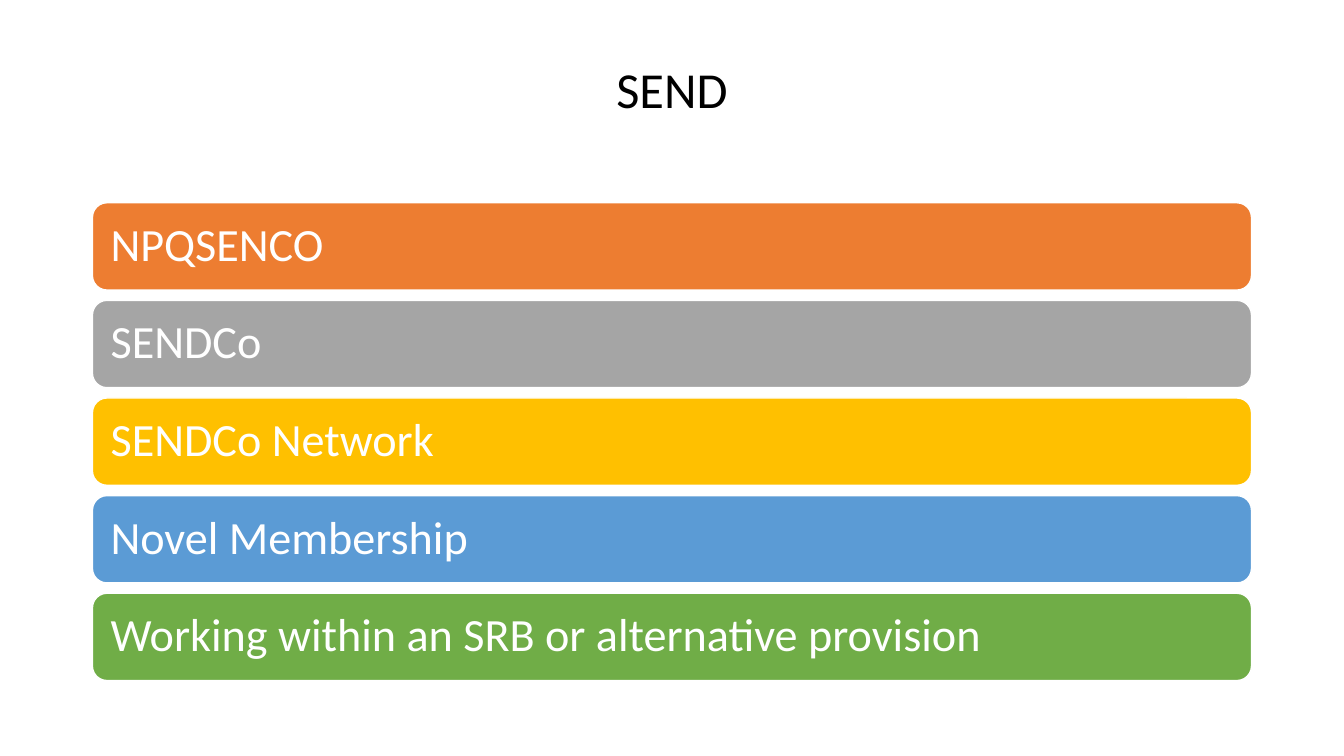
"""Build the SEND slide: a title above five coloured bars."""
import pptx
import pptx.dml.color
import pptx.enum.shapes
import pptx.enum.text
import pptx.util

Cm = pptx.util.Cm
Pt = pptx.util.Pt
Align = pptx.enum.text.PP_ALIGN
Anchor = pptx.enum.text.MSO_ANCHOR


def tint(hex):
    return pptx.dml.color.RGBColor.from_string(hex)


def write(shape, text, size, color, align, frame_format):
    frame = shape.text_frame
    for name, value in frame_format.items():
        setattr(frame, name, value)
    para = frame.paragraphs[0]
    para.text = text
    para.alignment = align
    para.line_spacing = 0.9
    for name, value in {"name": "Calibri", "size": Pt(size)}.items():
        setattr(para.font, name, value)
    para.font.color.rgb = tint(color)


deck = pptx.Presentation()
deck.slide_width = Cm(33.87)
deck.slide_height = Cm(19.05)
slide = deck.slides.add_slide(deck.slide_layouts[6])

left, width = Cm(2.33), Cm(29.21)
title = slide.shapes.add_textbox(left, Cm(1.55), width, Cm(3.15))
title_format = {
    "word_wrap": True,
    "vertical_anchor": Anchor.TOP,
    "margin_top": Cm(0.1),
}
write(title, "SEND", 36, "000000", Align.CENTER, title_format)

bars = [
    ("NPQSENCO", "ED7D31"),
    ("SENDCo", "A5A5A5"),
    ("SENDCo Network", "FFC000"),
    ("Novel Membership", "5B9BD5"),
    ("Working within an SRB or alternative provision", "70AD47"),
]
bar_format = {
    "word_wrap": True,
    "vertical_anchor": Anchor.MIDDLE,
    "margin_left": Cm(0.35),
    "margin_right": Cm(0.35),
}
top, step, height = 5.11, 2.46, 2.2
for row, (label, color) in enumerate(bars):
    bar = slide.shapes.add_shape(
        pptx.enum.shapes.MSO_SHAPE.ROUNDED_RECTANGLE,
        left, Cm(top + row * step), width, Cm(height))
    bar.shadow.inherit = False
    bar.fill.solid()
    bar.fill.fore_color.rgb = tint(color)
    bar.line.color.rgb = tint("FFFFFF")
    bar.line.width = Pt(1)
    write(bar, label, 33, "FFFFFF", Align.LEFT, bar_format)

deck.save("out.pptx")
